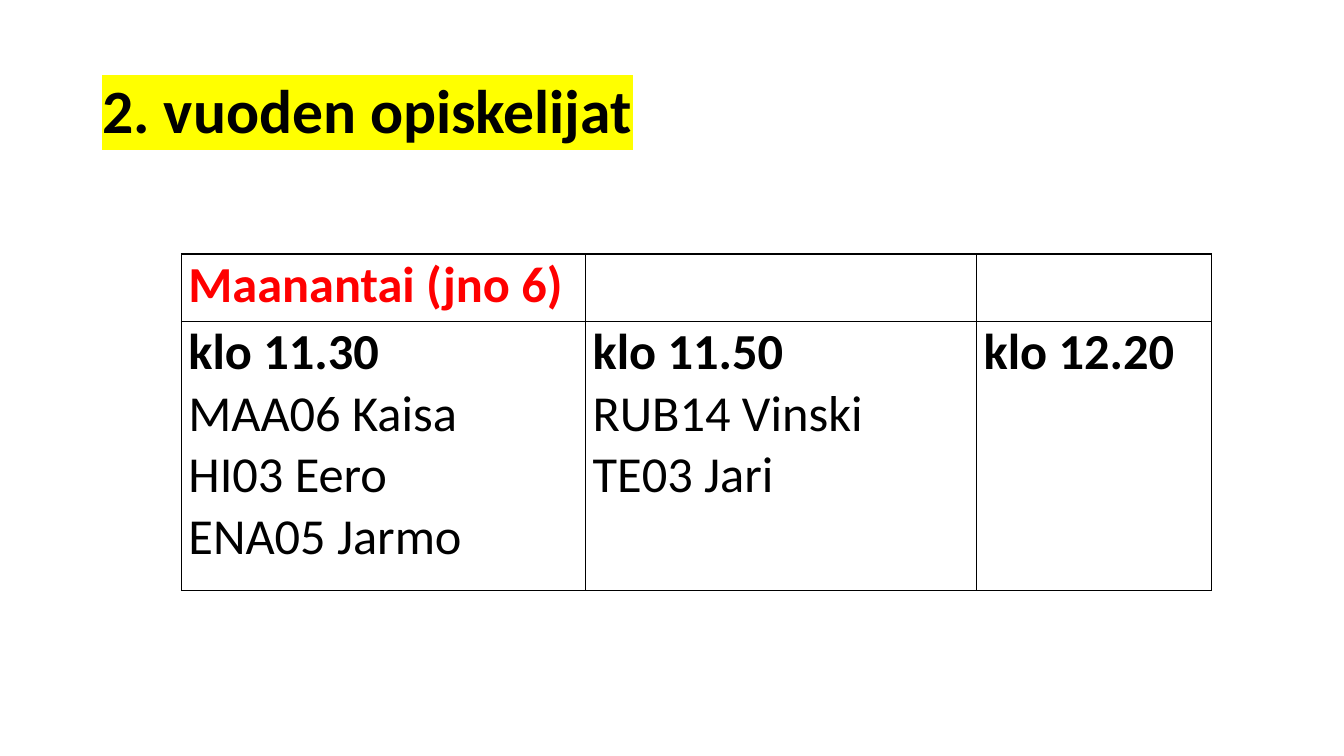
from dataclasses import dataclass

from lxml.etree import SubElement
from pptx import Presentation
from pptx.dml.color import RGBColor
from pptx.enum.text import MSO_ANCHOR, PP_ALIGN
from pptx.oxml import parse_xml
from pptx.oxml.ns import nsdecls, qn
from pptx.util import Pt


@dataclass(frozen=True)
class Theme:
    font: str = "Calibri"
    ink: str = "000000"
    day: str = "FF0000"
    marker: str = "FFFF00"
    title_size: int = 44
    table_size: int = 36
    border: int = 1


THEME = Theme()

TITLE = "2. vuoden opiskelijat"
DAY = "Maanantai (jno 6)"
SESSIONS = [
    ["klo 11.30", "MAA06 Kaisa", "HI03 Eero", "ENA05 Jarmo"],
    ["klo 11.50", "RUB14 Vinski", "TE03 Jari"],
    ["klo 12.20"],
]

# Boxes are left, top, width, height in points
TITLE_BOX = (66, 28.8, 828, 104.4)
TABLE_BOX = (129.6, 181.44, 735.84, 240.48)
COLUMN_SHARES = (4.01, 3.88, 2.33)
HEADER_HEIGHT = 48.24


def set_attributes(target, values):
    for name, value in values.items():
        setattr(target, name, value)


def place(shape, box):
    names = ("left", "top", "width", "height")
    set_attributes(shape, {name: Pt(length) for name, length in zip(names, box)})


def add_span(para, text, size, color, bold=True):
    span = para.add_run()
    span.text = text
    set_attributes(span.font, {"name": THEME.font, "size": Pt(size), "bold": bold})
    span.font.color.rgb = RGBColor.from_string(color)
    return span


def highlight(span, color):
    mark = parse_xml(f'<a:highlight {nsdecls("a")}><a:srgbClr val="{color}"/></a:highlight>')
    span.font._element.find(qn("a:solidFill")).addnext(mark)


def add_borders(cell):
    properties = cell._tc.get_or_add_tcPr()
    for side in ("lnL", "lnR", "lnT", "lnB"):
        line = SubElement(properties, qn(f"a:{side}"), w=str(Pt(THEME.border)))
        fill = SubElement(line, qn("a:solidFill"))
        SubElement(fill, qn("a:srgbClr"), val=THEME.ink)


def build_title(page, box):
    title = page.shapes.title
    place(title, box)
    set_attributes(title.text_frame, {"vertical_anchor": MSO_ANCHOR.MIDDLE, "word_wrap": True})
    para = title.text_frame.paragraphs[0]
    set_attributes(para, {"alignment": PP_ALIGN.LEFT, "line_spacing": 0.9})
    highlight(add_span(para, TITLE, THEME.title_size, THEME.ink), THEME.marker)


def build_timetable(page, box):
    left, top, width, height = box
    frame = page.shapes.add_table(2, len(SESSIONS), Pt(left), Pt(top), Pt(width), Pt(height))
    table = frame.table
    set_attributes(table, {"first_row": False, "horz_banding": False})
    for column, share in zip(table.columns, COLUMN_SHARES):
        column.width = Pt(width * share / sum(COLUMN_SHARES))
    for row, row_height in zip(table.rows, (HEADER_HEIGHT, height - HEADER_HEIGHT)):
        row.height = Pt(row_height)

    # Plain cells with thin borders
    margins = {"margin_left": Pt(5), "margin_right": Pt(5), "margin_top": 0, "margin_bottom": 0}
    for cell in table.iter_cells():
        set_attributes(cell, margins)
        add_borders(cell)
        cell.fill.background()

    # Day heading
    day_para = table.cell(0, 0).text_frame.paragraphs[0]
    add_span(day_para, DAY, THEME.table_size, THEME.day)

    # One session per column, its time in bold
    for column, lines in enumerate(SESSIONS):
        text = table.cell(1, column).text_frame
        for index, line in enumerate(lines):
            para = text.add_paragraph() if index else text.paragraphs[0]
            add_span(para, line, THEME.table_size, THEME.ink, bold=index == 0)


def main():
    deck = Presentation()
    set_attributes(deck, {"slide_width": Pt(960), "slide_height": Pt(540)})
    page = deck.slides.add_slide(deck.slide_layouts.get_by_name("Title Only"))
    build_title(page, TITLE_BOX)
    build_timetable(page, TABLE_BOX)
    deck.save("out.pptx")


if __name__ == "__main__":
    main()
